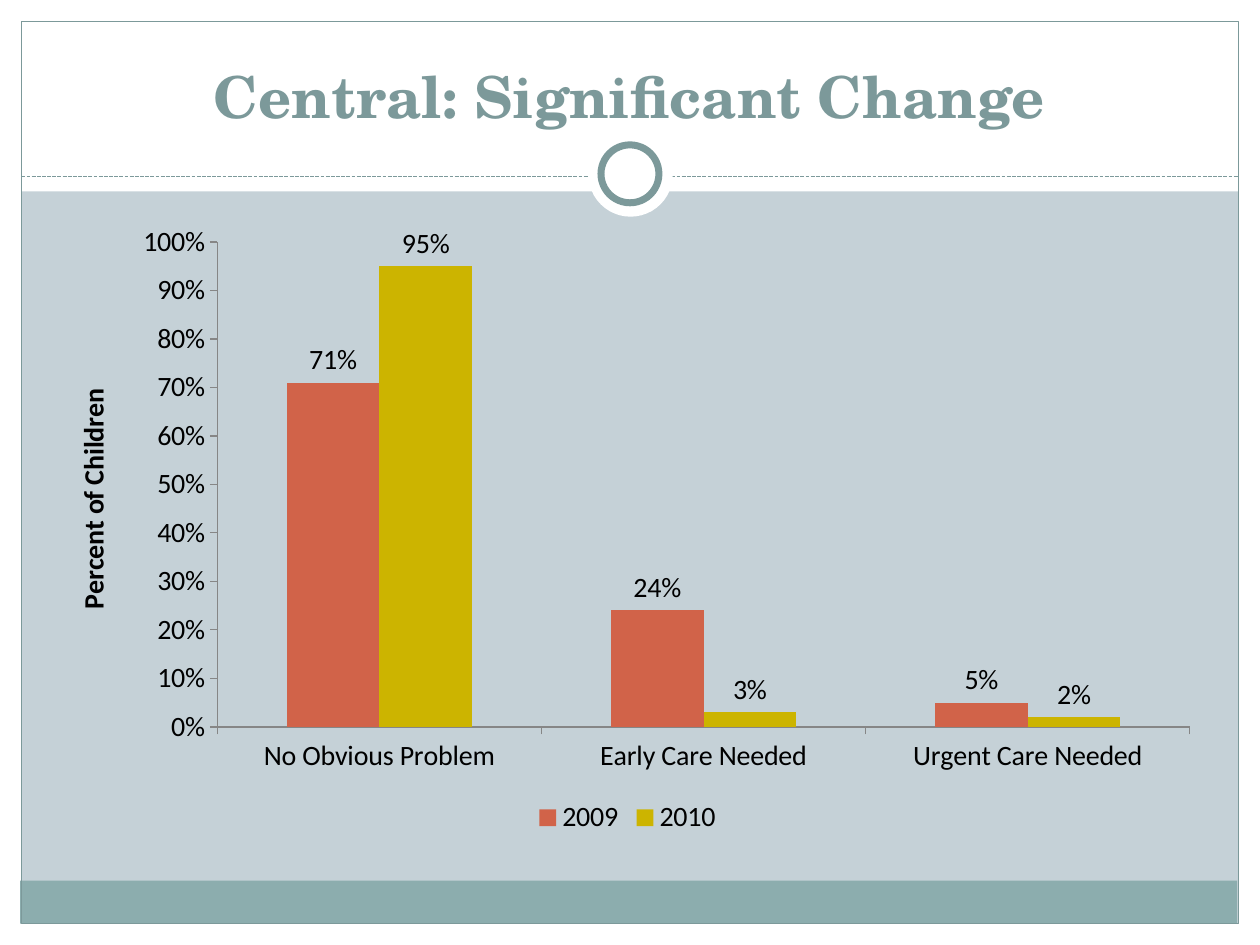
from lxml.etree import SubElement
from pptx import Presentation
from pptx.chart.data import CategoryChartData
from pptx.dml.color import RGBColor
from pptx.enum.chart import XL_CHART_TYPE, XL_LABEL_POSITION, XL_LEGEND_POSITION, XL_TICK_MARK
from pptx.enum.dml import MSO_LINE
from pptx.enum.shapes import MSO_CONNECTOR, MSO_SHAPE
from pptx.enum.text import MSO_ANCHOR, PP_ALIGN
from pptx.oxml import parse_xml
from pptx.oxml.ns import nsdecls, qn
from pptx.util import Inches, Pt

COLORS = {
    "background": "C5D1D7",
    "white": "FFFFFF",
    "footer": "8CADAE",
    "accent": "7C999A",
    "text": "000000",
    "axis": "868686",
    "2009": "D16349",
    "2010": "CCB400",
}


def color(name):
    return RGBColor.from_string(COLORS[name])


def set_font(font, **values):
    font.color.rgb = color(values.pop("color"))
    for name, value in values.items():
        setattr(font, name, value)


presentation = Presentation()
presentation.slide_width = Inches(10)
presentation.slide_height = Inches(7.5)
slide = presentation.slides.add_slide(presentation.slide_layouts[5])
slide.background.fill.solid()
slide.background.fill.fore_color.rgb = color("background")

bands = [
    (0, 7.33, 10, 0.17, "white"),
    (0, 0, 10, 1.52, "white"),
    (0, 0, 0.17, 7.5, "white"),
    (9.83, 0, 0.17, 7.5, "white"),
    (0.16, 6.99, 9.66, 0.34, "footer"),
]
for left, top, width, height, fill in bands:
    band = slide.shapes.add_shape(
        MSO_SHAPE.RECTANGLE, Inches(left), Inches(top), Inches(width), Inches(height))
    band.shadow.inherit = False
    band.fill.solid()
    band.fill.fore_color.rgb = color(fill)
    band.line.fill.background()

frame = slide.shapes.add_shape(
    MSO_SHAPE.RECTANGLE, Inches(0.17), Inches(0.17), Inches(9.66), Inches(7.16))
frame.shadow.inherit = False
frame.fill.background()
frame.line.color.rgb = color("accent")
frame.line.width = Pt(0.75)

divider = slide.shapes.add_connector(
    MSO_CONNECTOR.STRAIGHT, Inches(0.17), Inches(1.4), Inches(9.83), Inches(1.4))
divider.line.color.rgb = color("accent")
divider.line.width = Pt(0.75)
divider.line.dash_style = MSO_LINE.SQUARE_DOT
SubElement(divider.element.spPr, qn("a:effectLst"))

for left, top, size, outline in [(4.67, 1.05, 0.67, 0), (4.77, 1.15, 0.46, 4)]:
    circle = slide.shapes.add_shape(
        MSO_SHAPE.OVAL, Inches(left), Inches(top), Inches(size), Inches(size))
    circle.shadow.inherit = False
    circle.fill.solid()
    circle.fill.fore_color.rgb = color("white")
    if outline:
        circle.line.color.rgb = color("accent")
        circle.line.width = Pt(outline)
    else:
        circle.line.fill.background()

title = slide.shapes.title
title.left, title.top = Inches(0.33), Inches(0.25)
title.width, title.height = Inches(9.33), Inches(0.83)
title.text_frame.text = "Central: Significant Change"
title.text_frame.vertical_anchor = MSO_ANCHOR.BOTTOM
paragraph = title.text_frame.paragraphs[0]
paragraph.alignment = PP_ALIGN.CENTER
set_font(paragraph.font, name="TeX Gyre Schola", size=Pt(33), bold=True, color="accent")
title.element.getparent().append(title.element)

chart_data = CategoryChartData(number_format="0%")
chart_data.categories = ["No Obvious Problem", "Early Care Needed", "Urgent Care Needed"]
chart_data.add_series("2009", (0.71, 0.24, 0.05))
chart_data.add_series("2010", (0.95, 0.03, 0.02))
chart = slide.shapes.add_chart(
    XL_CHART_TYPE.COLUMN_CLUSTERED, Inches(0.33), Inches(1.67), Inches(9.3), Inches(5),
    chart_data).chart
set_font(chart.font, name="Calibri", size=Pt(16), color="text")
chart.has_title = False
chart.has_legend = True
chart.legend.position = XL_LEGEND_POSITION.BOTTOM
chart.legend.include_in_layout = False

plot = chart.plots[0]
plot.gap_width = 150
plot.overlap = 0
plot.vary_by_categories = False
for series in plot.series:
    series.format.fill.solid()
    series.format.fill.fore_color.rgb = color(series.name)
    labels = series.data_labels
    label_format = {
        "show_value": True,
        "position": XL_LABEL_POSITION.OUTSIDE_END,
        "number_format": "0%",
        "number_format_is_linked": False,
    }
    for name, value in label_format.items():
        setattr(labels, name, value)

for axis in (chart.category_axis, chart.value_axis):
    axis.has_major_gridlines = False
    axis.major_tick_mark = XL_TICK_MARK.OUTSIDE
    axis.minor_tick_mark = XL_TICK_MARK.NONE
    axis.format.line.color.rgb = color("axis")
    axis.format.line.width = Pt(0.75)

value_axis = chart.value_axis
value_axis.minimum_scale = 0
value_axis.maximum_scale = 1
value_axis.major_unit = 0.1
value_axis.tick_labels.number_format = "0%"
value_axis.tick_labels.number_format_is_linked = False
value_axis.axis_title.text_frame.text = "Percent of Children"
axis_font = value_axis.axis_title.text_frame.paragraphs[0].runs[0].font
set_font(axis_font, name="Calibri", size=Pt(16), bold=True, color="text")

plot_area = chart.element.find(".//" + qn("c:plotArea"))
for layout in plot_area.findall(qn("c:layout")):
    plot_area.remove(layout)
plot_area.insert(0, parse_xml(
    f'<c:layout {nsdecls("c")}><c:manualLayout><c:layoutTarget val="inner"/>'
    '<c:xMode val="edge"/><c:yMode val="edge"/><c:x val="0.15"/><c:y val="0.05"/>'
    '<c:w val="0.83"/><c:h val="0.77"/></c:manualLayout></c:layout>'))

presentation.save("out.pptx")
